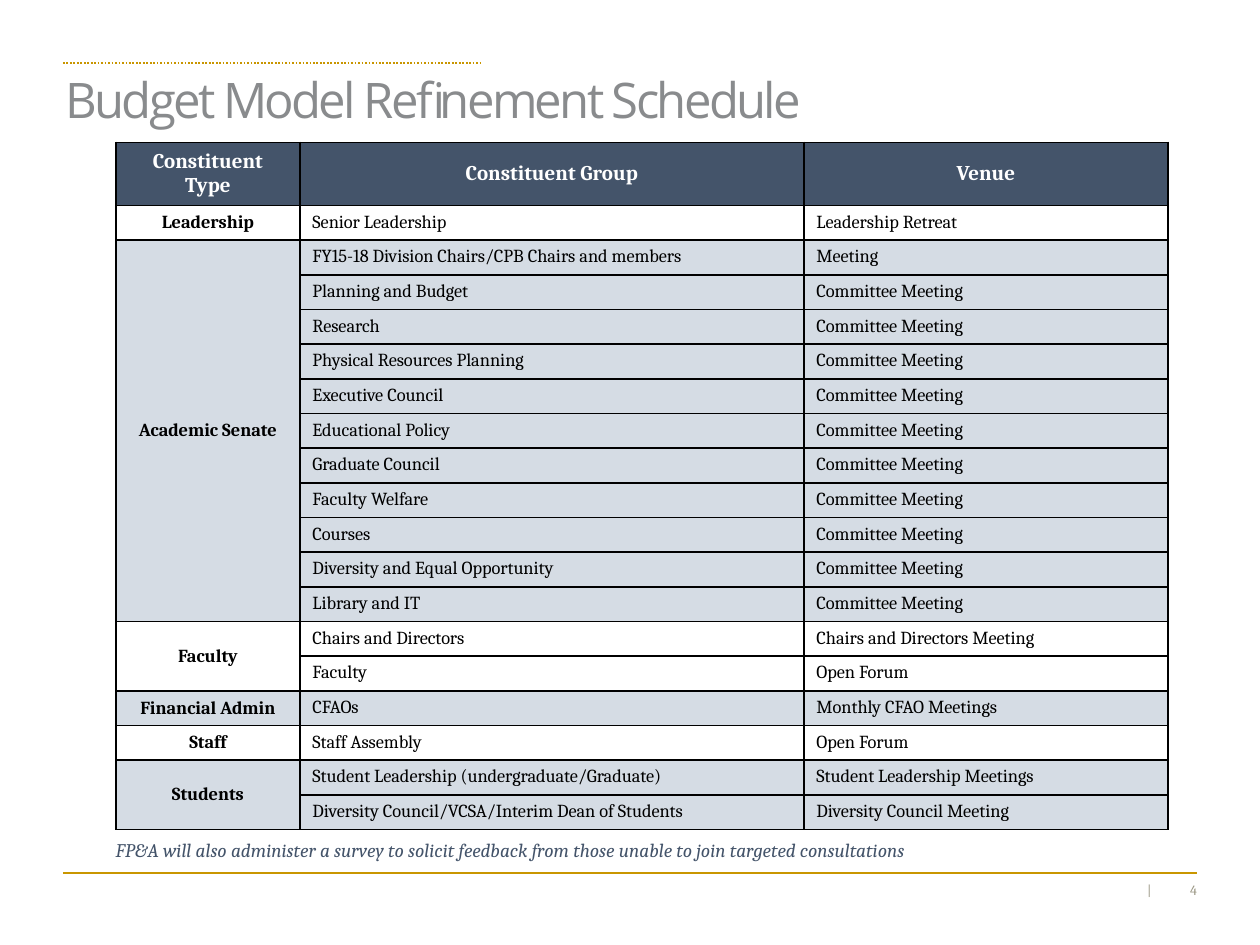
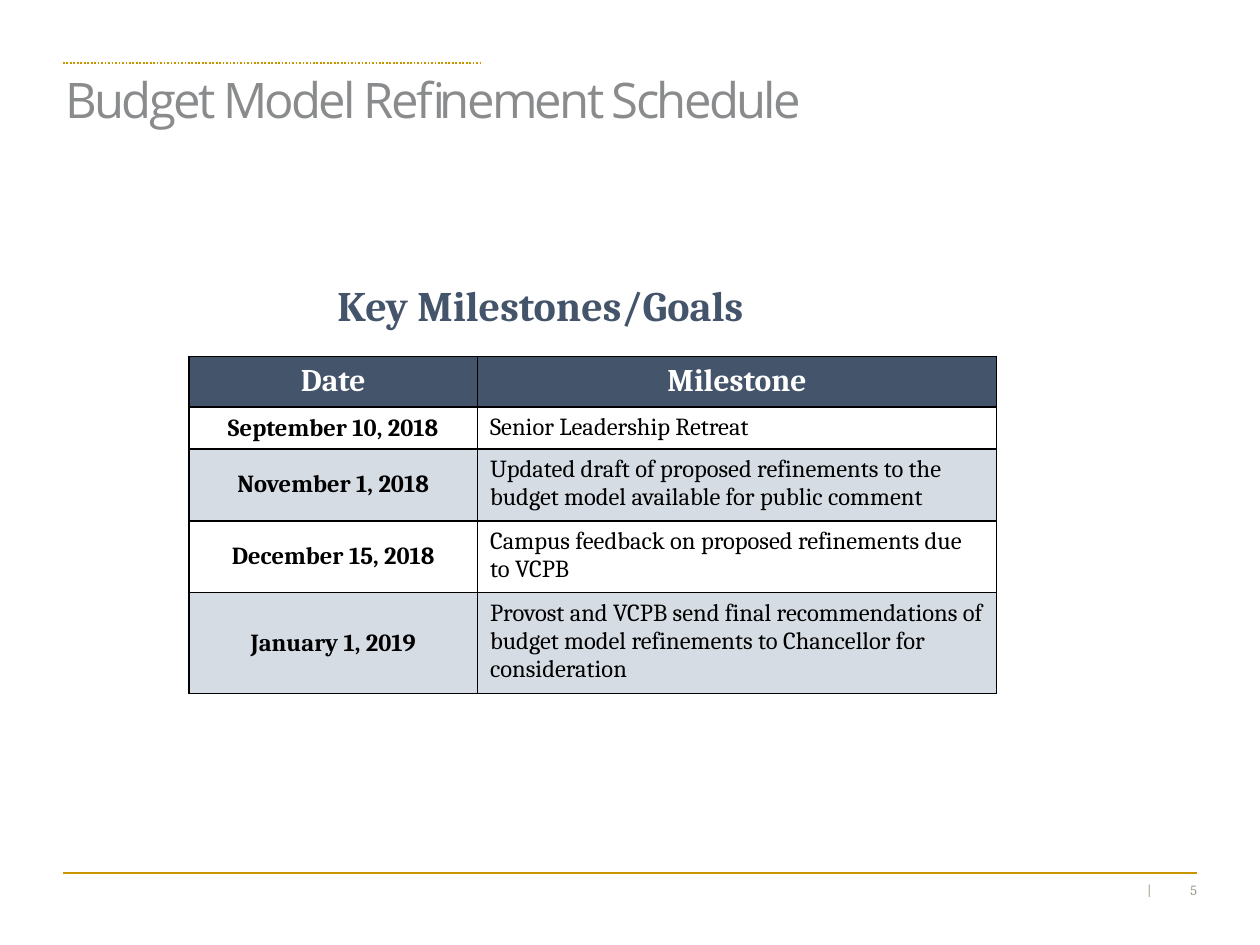
from dataclasses import dataclass

from lxml import etree
from pptx import Presentation
from pptx.dml.color import RGBColor
from pptx.enum.dml import MSO_LINE
from pptx.enum.shapes import MSO_CONNECTOR
from pptx.enum.text import MSO_ANCHOR, MSO_AUTO_SIZE, PP_ALIGN
from pptx.oxml.ns import qn
from pptx.util import Inches, Pt

STRAIGHT = MSO_CONNECTOR.STRAIGHT
DOTTED = MSO_LINE.ROUND_DOT
TOP, MIDDLE = MSO_ANCHOR.TOP, MSO_ANCHOR.MIDDLE
LEFT, CENTER, RIGHT = PP_ALIGN.LEFT, PP_ALIGN.CENTER, PP_ALIGN.RIGHT
FIXED = MSO_AUTO_SIZE.NONE
TITLE_ONLY = 5


@dataclass(frozen=True)
class Theme:
    title_font: str = "Open Sans"
    body_font: str = "Cambria"
    gold: str = "C99600"
    title_gray: str = "898B8D"
    footer_gray: str = "999683"
    navy: str = "44546A"
    band: str = "D5DCE4"
    white: str = "FFFFFF"
    black: str = "000000"
    title_size: float = 28
    heading_size: float = 24
    note_size: float = 11
    footer_size: float = 8
    schedule_header_size: float = 12
    schedule_size: float = 10.5
    milestone_header_size: float = 18
    milestone_size: float = 14
    rule_width: float = 1
    title_spacing: int = -150


THEME = Theme()
TITLE = "Budget Model Refinement Schedule"

COMMITTEES = [
    "Planning and Budget",
    "Research",
    "Physical Resources Planning",
    "Executive Council",
    "Educational Policy",
    "Graduate Council",
    "Faculty Welfare",
    "Courses",
    "Diversity and Equal Opportunity",
    "Library and IT",
]

CONSTITUENTS = [
    ("Leadership", [("Senior Leadership", "Leadership Retreat")]),
    ("Academic Senate",
     [("FY15-18 Division Chairs/CPB Chairs and members", "Meeting")]
     + [(committee, "Committee Meeting") for committee in COMMITTEES]),
    ("Faculty", [("Chairs and Directors", "Chairs and Directors Meeting"),
                 ("Faculty", "Open Forum")]),
    ("Financial Admin", [("CFAOs", "Monthly CFAO Meetings")]),
    ("Staff", [("Staff Assembly", "Open Forum")]),
    ("Students", [
        ("Student Leadership (undergraduate/Graduate)", "Student Leadership Meetings"),
        ("Diversity Council/VCSA/Interim Dean of Students", "Diversity Council Meeting"),
    ]),
]

MILESTONES = [
    ("September 10, 2018", [("Senior Leadership Retreat",)]),
    ("November 1, 2018",
     [("Updated draft of proposed refinements to the budget model available for public comment",)]),
    ("December 15, 2018", [("Campus feedback on proposed refinements due to VCPB",)]),
    ("January 1, 2019",
     [("Provost and VCPB send final recommendations of budget model refinements "
       "to Chancellor for consideration",)]),
]


def apply(target, values):
    for name, value in values.items():
        setattr(target, name, value)


class Deck:
    def __init__(self, theme):
        self.theme = theme
        self.prs = Presentation()
        apply(self.prs, {"slide_width": Inches(10), "slide_height": Inches(7.5)})
        self.slide = None

    def new_slide(self, title, number):
        theme = self.theme
        self.slide = self.prs.slides.add_slide(self.prs.slide_layouts[TITLE_ONLY])
        self.rule(0.5, 3.82, 0.5, DOTTED)
        self.rule(0.5, 9.5, 6.93)
        for mark, left, width in ((str(number), 9.33, 0.17), ("|", 9.1, 0.04)):
            self.text(mark, (left, 7, width, 0.13), theme.footer_size,
                      theme.footer_gray, align=RIGHT, margin=0)
        self.title(title)

    def title(self, wording):
        theme = self.theme
        heading = self.slide.shapes.title
        apply(heading, {"left": Inches(0.42), "top": Inches(0.5),
                        "width": Inches(8.83), "height": Inches(1.04)})
        apply(heading.text_frame, {"vertical_anchor": TOP, "auto_size": FIXED})
        run = self.styled_run(heading.text_frame, wording, theme.title_size,
                              theme.title_gray, font=theme.title_font)
        run.font._element.set("spc", str(theme.title_spacing))

    def styled_run(self, frame, wording, size, color, align=LEFT, font=None,
                   bold=False, italic=False):
        paragraph = frame.paragraphs[0]
        paragraph.alignment = align
        run = paragraph.add_run()
        run.text = wording
        apply(run.font, {"name": font or self.theme.body_font, "size": Pt(size),
                         "bold": bold, "italic": italic})
        run.font.color.rgb = RGBColor.from_string(color)
        return run

    def text(self, wording, box, size, color, margin=None, **style):
        frame = self.slide.shapes.add_textbox(*map(Inches, box)).text_frame
        frame.word_wrap = True
        if margin is not None:
            sides = ("left", "top", "right", "bottom")
            apply(frame, {f"margin_{side}": Inches(margin) for side in sides})
        self.styled_run(frame, wording, size, color, **style)

    def rule(self, start, end, y, dash=None):
        line = self.slide.shapes.add_connector(
            STRAIGHT, Inches(start), Inches(y), Inches(end), Inches(y))
        line.line.color.rgb = RGBColor.from_string(self.theme.gold)
        apply(line.line, {"width": Pt(self.theme.rule_width), "dash_style": dash})
        etree.SubElement(line._element.spPr, qn("a:effectLst"))

    def border(self, cell):
        properties = cell._tc.get_or_add_tcPr()
        for side in ("lnL", "lnR", "lnT", "lnB"):
            edge = etree.SubElement(properties, qn(f"a:{side}"),
                                    w=str(Pt(self.theme.rule_width)))
            fill = etree.SubElement(edge, qn("a:solidFill"))
            etree.SubElement(fill, qn("a:srgbClr"), val=self.theme.black)

    def cell(self, cell, wording, fill, size, color, anchor=MIDDLE, **style):
        cell.vertical_anchor = anchor
        cell.fill.solid()
        cell.fill.fore_color.rgb = RGBColor.from_string(fill)
        self.styled_run(cell.text_frame, wording, size, color, **style)

    def grouped_table(self, corner, headers, groups, widths, heights, header_size, size):
        theme = self.theme
        left, top = corner
        table = self.slide.shapes.add_table(
            len(heights), len(widths), Inches(left), Inches(top),
            Inches(sum(widths)), Inches(sum(heights))).table
        apply(table, {"first_row": False, "horz_banding": False})
        for column, width in zip(table.columns, widths):
            column.width = Inches(width)
        for row, height in zip(table.rows, heights):
            row.height = Inches(height)
        for cell in table.iter_cells():
            self.border(cell)

        label_style = {"align": CENTER, "bold": True}
        for column, header in enumerate(headers):
            self.cell(table.cell(0, column), header, theme.navy, header_size,
                      theme.white, **label_style)
        first = 1
        for index, (label, entries) in enumerate(groups):
            fill = theme.band if index % 2 else theme.white
            last = first + len(entries) - 1
            if last > first:
                table.cell(first, 0).merge(table.cell(last, 0))
            self.cell(table.cell(first, 0), label, fill, size, theme.black, **label_style)
            for row, entry in enumerate(entries, first):
                for column, wording in enumerate(entry, 1):
                    self.cell(table.cell(row, column), wording, fill, size,
                              theme.black, anchor=TOP)
            first = last + 1


def main():
    deck = Deck(THEME)

    deck.new_slide(TITLE, 4)
    entry_count = sum(len(entries) for _, entries in CONSTITUENTS)
    deck.grouped_table(
        (0.92, 1.13), ("Constituent Type", "Constituent Group", "Venue"), CONSTITUENTS,
        (1.46, 4, 2.89), [0.5] + [0.27] * entry_count,
        THEME.schedule_header_size, THEME.schedule_size)
    deck.text("FP&A will also administer a survey to solicit feedback from those "
              "unable to join targeted consultations",
              (0.82, 6.6, 9.83, 0.29), THEME.note_size, THEME.navy, italic=True)

    deck.new_slide(TITLE, 5)
    deck.grouped_table(
        (1.5, 2.83), ("Date", "Milestone"), MILESTONES,
        (2.29, 4.12), [0.4, 0.33, 0.57, 0.57, 0.8],
        THEME.milestone_header_size, THEME.milestone_size)
    deck.text("Key Milestones/Goals", (2.58, 2.17, 4.83, 0.5),
              THEME.heading_size, THEME.navy, bold=True)

    deck.prs.save("out.pptx")


if __name__ == "__main__":
    main()
